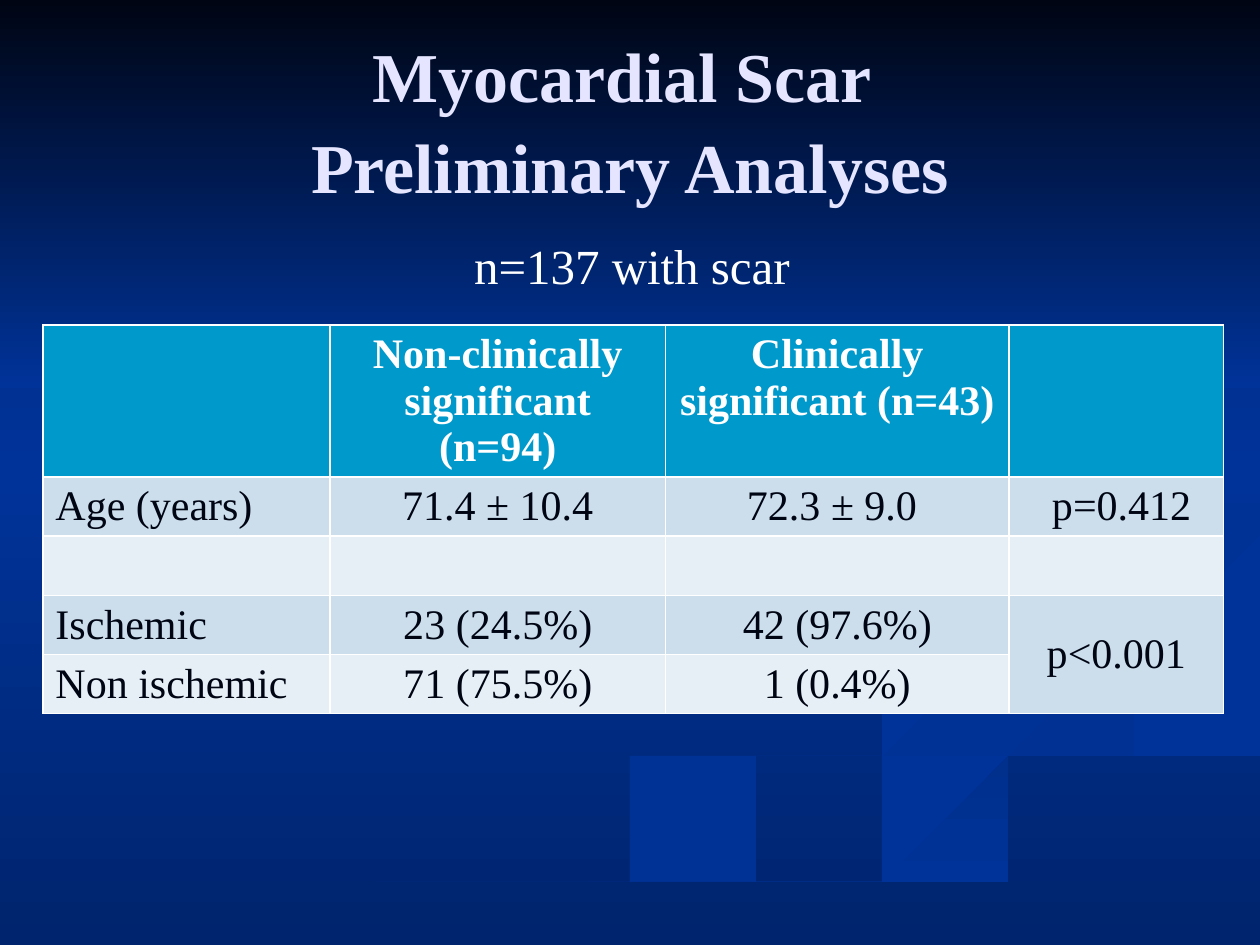
from copy import deepcopy
from pptx import Presentation
from pptx.dml.color import RGBColor
from pptx.enum.shapes import MSO_SHAPE as Shape
from pptx.enum.text import MSO_ANCHOR as Anchor, PP_ALIGN as Align
from pptx.oxml.ns import qn
from pptx.util import Inches, Pt

FONT = "Times New Roman"
NAVY, BLUE, INK, WHITE = "00246D", "003399", "000514", "FFFFFF"
STEPS = 6


def paint(fill, tones, angle=0):
    """Fill with one colour, or with a gradient turned clockwise by angle."""
    if len(tones) == 1:
        fill.solid()
        fill.fore_color.rgb = RGBColor.from_string(tones[0])
        return
    fill.gradient()
    fill.gradient_angle = (360 - angle) % 360
    for stop, tone in zip(fill.gradient_stops, tones):
        stop.color.rgb = RGBColor.from_string(tone)


def write(para, text, size, tone, bold=False):
    run = para.add_run()
    run.text = text
    run.font.name, run.font.size, run.font.bold = FONT, Pt(size), bold
    run.font.color.rgb = RGBColor.from_string(tone)


prs = Presentation()
prs.slide_width, prs.slide_height = Inches(10), Inches(7.5)
slide = prs.slides.add_slide(prs.slide_layouts[5])
shapes = slide.shapes

# Background: dark, blue in the middle, dark again
paint(slide.background.fill, [NAVY, BLUE], 90)
stops = slide.element.find(".//" + qn("a:gsLst"))
last = deepcopy(stops[0])
stops[1].set("pos", "50000")
last.set("pos", "100000")
stops.append(last)

# River bands: colours, gradient angle, and the knots of each edge in turn
bands = [
    ([BLUE, "003193"], 0, [
        [(5.75, 4.59), (5.81, 4.84), (6.79, 5.19), (7.62, 5.47), (7.86, 5.66),
         (7.59, 5.9), (6.84, 6.13), (5.39, 6.49), (4.17, 6.9), (3, 7.49)],
        [(3.61, 7.49), (5.32, 6.74), (6.51, 6.4), (7.69, 6.09), (8, 5.81),
         (7.81, 5.53), (6.82, 5.19), (6.02, 4.9), (5.75, 4.59)]]),
    ([BLUE, "003193"], 45, [
        [(7.24, 4.64), (7.46, 5), (8.38, 5.36), (9.07, 5.62), (9.18, 5.81),
         (8.94, 6.05)],
        [(8.94, 6.05), (9.32, 5.89), (9.43, 5.7), (9.3, 5.53), (8.7, 5.3),
         (7.58, 4.98), (7.24, 4.64)]]),
    (["002F8C", BLUE], 90, [
        [(9.98, 5.81), (9.03, 6.1), (7.64, 6.47), (6.3, 6.93), (5.03, 7.49)],
        [(5.71, 7.49), (6.95, 6.92), (8.21, 6.51), (9.98, 6.09)]]),
    ([BLUE], 0, [
        [(9.99, 3.87), (8.3, 4.15), (7.25, 4.64), (7.93, 5.09), (9.05, 5.4),
         (9.43, 5.7), (8.92, 6.05), (7.43, 6.43), (6.19, 6.84), (4.77, 7.49)],
        [(5.03, 7.49), (6.3, 6.93), (8.32, 6.29), (9.99, 5.81)],
        [(9.99, 5.38), (8.66, 5.09), (7.81, 4.63), (8.5, 4.27), (9.99, 4.02)]]),
    (["003091", BLUE], 45, [
        [(9.98, 4.02), (8.65, 4.24), (7.81, 4.6), (8.26, 4.96)],
        [(8.26, 4.96), (8.06, 4.72), (8.59, 4.43), (9.98, 4.2)]]),
]
for tones, angle, edges in bands:
    points = []
    for edge in edges:
        # Catmull-Rom curve through the knots
        knots = [edge[0], *edge, edge[-1]]
        for a, b, c, d in zip(knots, knots[1:], knots[2:], knots[3:]):
            for step in range(STEPS):
                t = step / STEPS
                points.append([
                    q + t * (r - p + t * (2 * p - 5 * q + 4 * r - s
                                          + t * (3 * q - p - 3 * r + s))) / 2
                    for p, q, r, s in zip(a, b, c, d)])
        points.append(edge[-1])
    pen = shapes.build_freeform(*points[0], scale=Inches(1))
    pen.add_line_segments(points[1:], close=True)
    band = pen.convert_to_shape()
    band.shadow.inherit = False
    band.line.fill.background()
    paint(band.fill, tones, angle)

sky = shapes.add_shape(Shape.RECTANGLE, 0, 0, Inches(10), Inches(3.08))
sky.shadow.inherit = False
sky.line.fill.background()
paint(sky.fill, [INK, BLUE], 90)

# Title, brought in front of the sky
title = shapes.title
title.element.getparent().append(title.element)
title.left, title.top = Inches(0.5), Inches(0.3)
title.width, title.height = Inches(9), Inches(1.25)
title.text_frame.vertical_anchor = Anchor.MIDDLE
para = title.text_frame.paragraphs[0]
para.alignment = Align.CENTER
para.line_spacing = 1.08
write(para, "Myocardial Scar ", 40, "E5E5FF", True)
para.add_line_break()
write(para, "Preliminary Analyses", 40, "E5E5FF", True)

# Results table
rows = [
    ["", "Non-clinically significant (n=94)", "Clinically significant (n=43)", ""],
    ["Age (years)", "71.4 ± 10.4", "72.3 ± 9.0 ", " p=0.412"],
    ["", "", "", ""],
    ["Ischemic", "23 (24.5%)", "42 (97.6%)", "p<0.001"],
    ["Non ischemic", "71 (75.5%)", "1 (0.4%)", ""],
]
table = shapes.add_table(5, 4, Inches(0.34), Inches(2.58),
                         Inches(9.37), Inches(3.08)).table
for col, width in zip(table.columns, [2.28, 2.66, 2.73, 1.7]):
    col.width = Inches(width)
for r, row in enumerate(rows):
    table.rows[r].height = Inches(0.47 if r else 1.2)
    tone = "0099CC" if r == 0 else "CCDEEC" if r % 2 else "E7EFF6"
    for c, text in enumerate(row):
        cell = table.cell(r, c)
        paint(cell.fill, [tone])
        if r and c:
            cell.vertical_anchor = Anchor.MIDDLE
        if text:
            para = cell.text_frame.paragraphs[0]
            para.alignment = Align.CENTER if c else Align.LEFT
            write(para, text, 24, INK if r else WHITE, r == 0)
table.cell(3, 3).merge(table.cell(4, 3))

# Sample size
note = shapes.add_textbox(Inches(2.74), Inches(1.82), Inches(4.55), Inches(0.57))
note.text_frame.word_wrap = True
para = note.text_frame.paragraphs[0]
para.alignment = Align.CENTER
write(para, "n=137 with scar", 28, WHITE)

prs.save("out.pptx")
